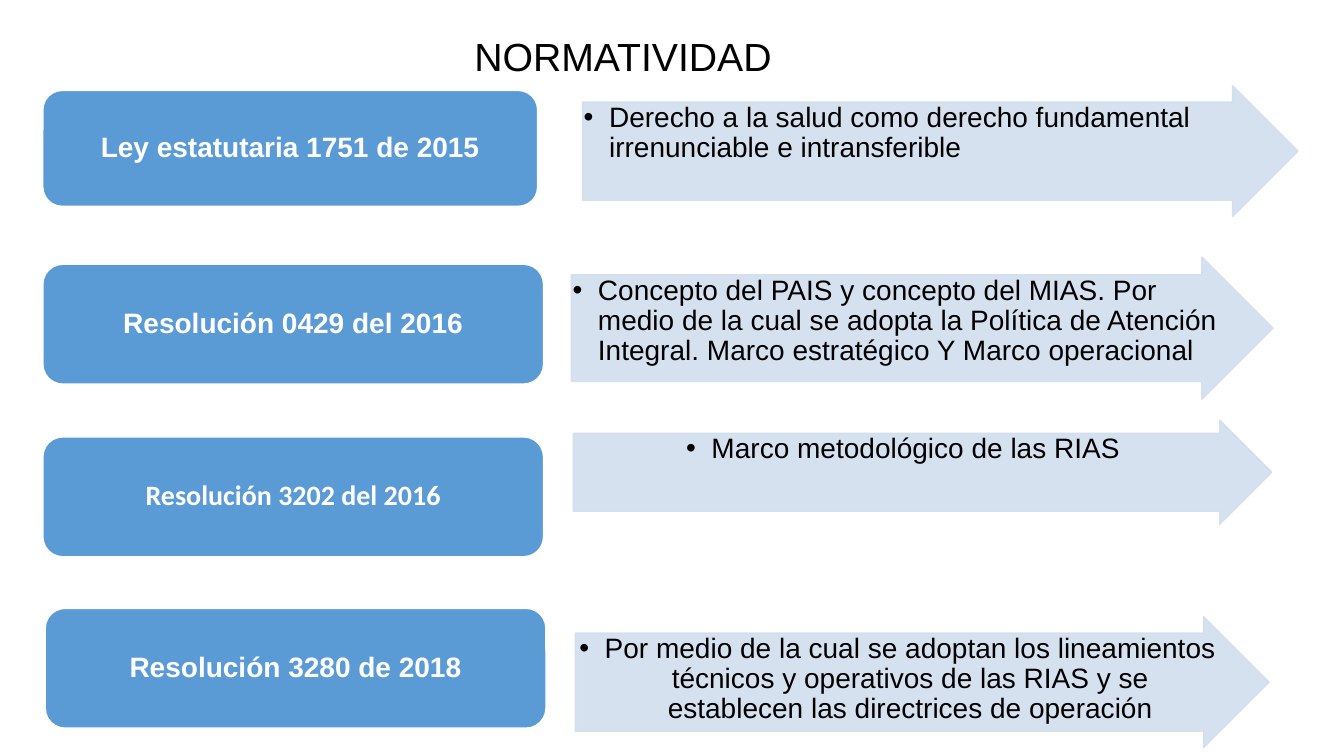
import dataclasses

import lxml.etree
import pptx
import pptx.dml.color
import pptx.enum.shapes
import pptx.enum.text
import pptx.oxml.ns
import pptx.util

Cm = pptx.util.Cm
Pt = pptx.util.Pt
RGB = pptx.dml.color.RGBColor.from_string
SHAPE = pptx.enum.shapes.MSO_SHAPE
ALIGN = pptx.enum.text.PP_ALIGN
ANCHOR = pptx.enum.text.MSO_ANCHOR
qn = pptx.oxml.ns.qn


@dataclasses.dataclass(frozen=True)
class Theme:
    box: str = "5B9BD5"
    arrow: str = "D2DEEF"
    light: str = "FFFFFF"
    dark: str = "000000"
    font: str = "Arial"
    alt_font: str = "Calibri"
    title_size: int = 28
    body_size: int = 20
    arrow_alpha: int = 90000


theme = Theme()


def style_text(p, font, size, color, bold=False):
    for r in p.runs:
        r.font.name = font
        r.font.size = Pt(size)
        r.font.color.rgb = RGB(color)
        r.font.bold = bold


def add_block(s, kind, frame, fill, line, text, align, anchor, margins):
    """Add a filled shape holding one paragraph; frame and margins are in cm."""
    sp = s.shapes.add_shape(kind, *[Cm(v) for v in frame])
    sp.shadow.inherit = False
    sp.fill.solid()
    sp.fill.fore_color.rgb = RGB(fill)
    sp.line.color.rgb = RGB(line)
    sp.line.width = Pt(1)
    tf = sp.text_frame
    tf.word_wrap = True
    tf.vertical_anchor = anchor
    tf.margin_left = tf.margin_right = Cm(margins[0])
    tf.margin_top = tf.margin_bottom = Cm(margins[1])
    p = tf.paragraphs[0]
    p.text = text
    p.alignment = align
    p.line_spacing = 0.9
    return sp


prs = pptx.Presentation()
prs.slide_width = Cm(33.87)
prs.slide_height = Cm(19.05)
s = prs.slides.add_slide(prs.slide_layouts[5])

title = s.shapes.title
title.left, title.top, title.width, title.height = Cm(10.29), Cm(0.69), Cm(10.82), Cm(1.45)
title.text_frame.text = "NORMATIVIDAD"
title.text_frame.vertical_anchor = ANCHOR.MIDDLE
p = title.text_frame.paragraphs[0]
p.alignment = ALIGN.CENTER
style_text(p, theme.font, theme.title_size, theme.dark)

# Each row: norm, its font, box frame, description, its alignment, arrow frame
rows = [
    ("Ley estatutaria 1751 de 2015", theme.font, (1.08, 2.28, 12.47, 2.92),
     "Derecho a la salud como derecho fundamental irrenunciable e intransferible",
     ALIGN.LEFT, (14.68, 2.16, 18.03, 3.3)),
    ("Resolución 0429 del 2016", theme.font, (1.08, 6.66, 12.62, 3.02),
     "Concepto del PAIS y concepto del MIAS. Por medio de la cual se adopta la "
     "Política de Atención Integral. Marco estratégico Y Marco operacional",
     ALIGN.LEFT, (14.4, 6.48, 17.68, 3.58)),
    ("Resolución 3202 del 2016", theme.alt_font, (1.08, 11.01, 12.62, 3.02),
     "Marco metodológico de las RIAS",
     ALIGN.CENTER, (14.45, 10.59, 17.6, 2.62)),
    ("Resolución 3280 de 2018", theme.font, (1.14, 15.33, 12.62, 3.02),
     "Por medio de la cual se adoptan los lineamientos técnicos y operativos de "
     "las RIAS y se establecen las directrices de operación",
     ALIGN.CENTER, (14.5, 15.54, 17.48, 3.3)),
]

for norm, font, box_frame, description, align, arrow_frame in rows:
    arrow = add_block(s, SHAPE.RIGHT_ARROW, arrow_frame, theme.arrow, theme.arrow,
                      description, align, ANCHOR.TOP, (0.03, 0.03))
    arrow.adjustments[0] = 0.75
    arrow.adjustments[1] = 0.5
    for color in arrow.fill.fore_color, arrow.line.color:
        clr = color._xFill.find(qn("a:srgbClr"))
        lxml.etree.SubElement(clr, qn("a:alpha"), val=str(theme.arrow_alpha))
    p = arrow.text_frame.paragraphs[0]
    pPr = p._p.get_or_add_pPr()
    pPr.set("marL", str(Cm(0.64)))
    pPr.set("indent", str(-Cm(0.64)))
    lxml.etree.SubElement(pPr, qn("a:buFont"), typeface=theme.font)
    lxml.etree.SubElement(pPr, qn("a:buChar"), char="•")
    style_text(p, theme.font, theme.body_size, theme.dark)

    box = add_block(s, SHAPE.ROUNDED_RECTANGLE, box_frame, theme.box, theme.light,
                    norm, ALIGN.CENTER, ANCHOR.MIDDLE, (0.2, 0.1))
    style_text(box.text_frame.paragraphs[0], font, theme.body_size, theme.light, bold=True)

prs.save("out.pptx")
